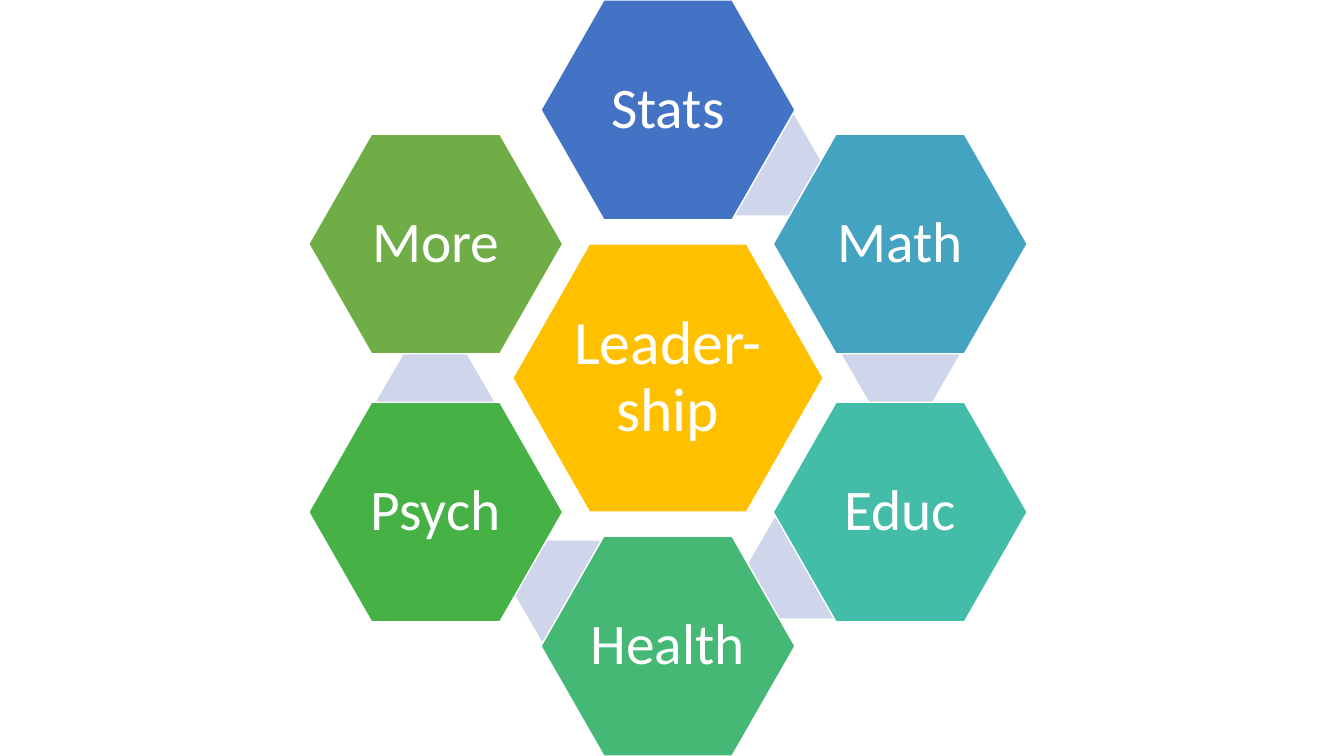
import math
from pptx import Presentation
from pptx.dml.color import RGBColor
from pptx.enum import shapes, text
from pptx.util import Inches, Pt

WHITE = RGBColor(0xFF, 0xFF, 0xFF)
GOLD = RGBColor(0xFF, 0xC0, 0x00)
LAVENDER = RGBColor(0xCF, 0xD5, 0xEA)
BLUE = RGBColor(0x44, 0x72, 0xC4)
CYAN = RGBColor(0x44, 0xA3, 0xC0)
TEAL = RGBColor(0x43, 0xBD, 0xA7)
MINT = RGBColor(0x44, 0xB8, 0x74)
GREEN = RGBColor(0x46, 0xB2, 0x46)
OLIVE = RGBColor(0x70, 0xAD, 0x47)

SUBJECTS = [("Stats", BLUE), ("Math", CYAN), ("Educ", TEAL),
            ("Health", MINT), ("Psych", GREEN), ("More", OLIVE)]


def around(cx, cy, radius, degrees):
    a = math.radians(degrees)
    return cx + radius * math.sin(a), cy - radius * math.cos(a)


def add_hexagon(s, cx, cy, w, h, fill, adj):
    sp = s.shapes.add_shape(shapes.MSO_SHAPE.HEXAGON, Inches(cx - w / 2),
                            Inches(cy - h / 2), Inches(w), Inches(h))
    sp.shadow.inherit = False
    sp.adjustments[0] = adj
    sp.fill.solid()
    sp.fill.fore_color.rgb = fill
    sp.line.fill.background()
    return sp


def add_subject(s, cx, cy, w, h, fill, label, size):
    sp = add_hexagon(s, cx, cy, w, h, fill, 0.286)
    sp.line.color.rgb = WHITE
    sp.line.width = Pt(1)
    tf = sp.text_frame
    tf.word_wrap = True
    tf.vertical_anchor = text.MSO_ANCHOR.MIDDLE
    tf.margin_left = tf.margin_right = Inches(0.06)
    tf.margin_top = tf.margin_bottom = Inches(0.06)
    tf.text = label
    p = tf.paragraphs[0]
    p.alignment = text.PP_ALIGN.CENTER
    p.line_spacing = 0.9
    r = p.runs[0]
    r.font.name = "Calibri"
    r.font.size = Pt(size)
    r.font.color.rgb = WHITE


def add_cluster(s, x, y, w, h):
    cx, cy = x + w / 2, y + h / 2
    add_subject(s, cx, cy, 3.08, 2.66, GOLD, "Leader-ship", 44)
    for i, (label, fill) in enumerate(SUBJECTS):
        if i < len(SUBJECTS) - 1:
            link_x, link_y = around(cx, cy, 2.32, 24.4 + 60 * i)
            add_hexagon(s, link_x, link_y, 1.16, 1, LAVENDER, 0.289)
        sub_x, sub_y = around(cx, cy, 2.66, 60 * i)
        add_subject(s, sub_x, sub_y, 2.52, 2.18, fill, label, 41)


def main():
    prs = Presentation()
    prs.slide_width, prs.slide_height = Inches(13.33), Inches(7.5)
    s = prs.slides.add_slide(prs.slide_layouts[6])
    add_cluster(s, 3.05, 0, 7.15, 7.5)
    prs.save("out.pptx")


if __name__ == "__main__":
    main()
